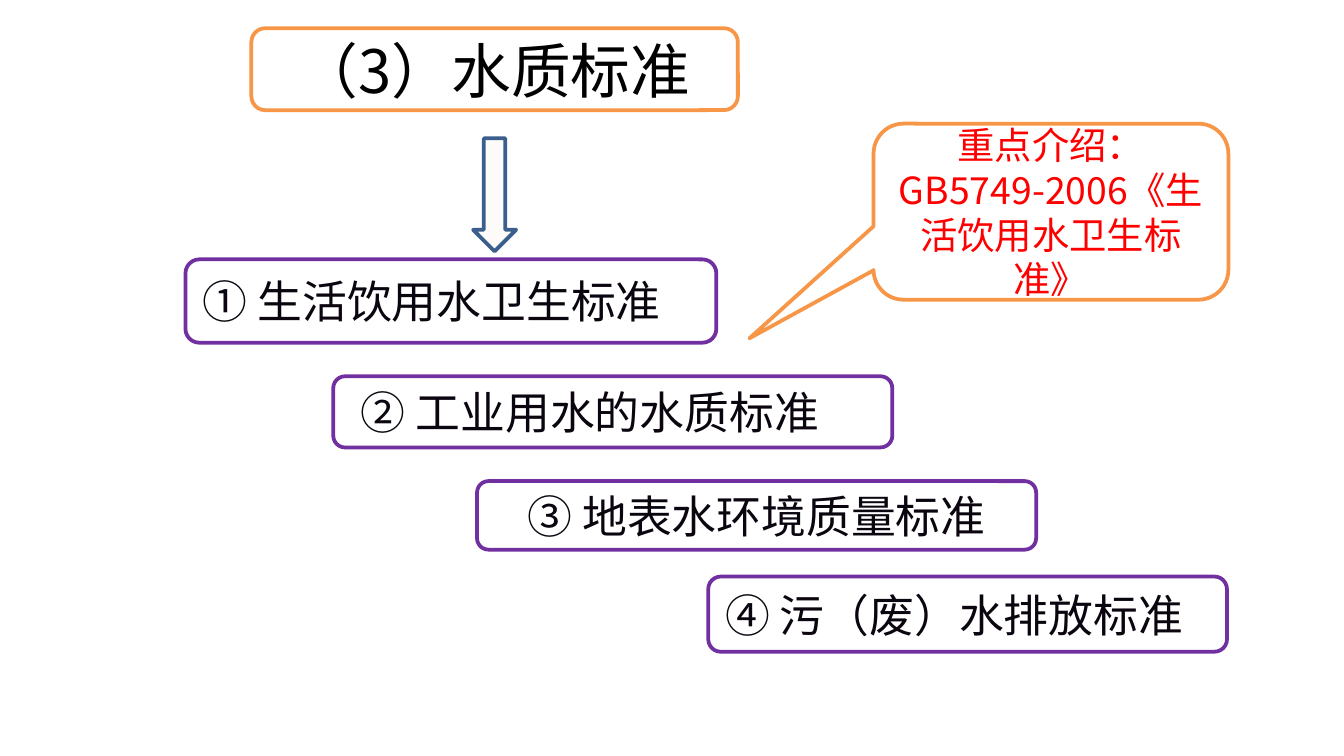
from pptx import Presentation
from pptx.dml.color import RGBColor
from pptx.enum import shapes, text
from pptx.oxml.ns import qn
from pptx.util import Inches, Pt
from lxml import etree

FONT = "Noto Sans CJK SC"
COLORS = {"purple": "7030A0", "orange": "F79646", "blue": "3A5F8C", "ink": "0B050F",
          "black": "000000", "red": "FF0000", "white": "FFFFFF", "ivory": "FCFBF9"}
LEFT, CENTER = text.PP_ALIGN.LEFT, text.PP_ALIGN.CENTER
KIND = shapes.MSO_SHAPE

# Content: wording, box (left, top, width, height), alignment, left inset
standards = [
    ("① 生活饮用水卫生标准", (1.38, 1.93, 3.95, 0.62), LEFT, 0.1),
    ("② 工业用水的水质标准", (2.48, 2.8, 4.16, 0.53), LEFT, 0.18),
    ("③ 地表水环境质量标准", (3.55, 3.58, 4.16, 0.51), CENTER, 0.1),
    ("④ 污（废）水排放标准", (5.27, 4.29, 3.86, 0.56), LEFT, 0.1),
]
# Callouts: wording, box, pointer adjustments, size, colour
callouts = [
    ("重点介绍：GB5749-2006《生活饮用水卫生标准》", (6.5, 0.92, 2.64, 1.31),
     (-0.85, 0.72, 0.17), 20, "red"),
    ("（3）水质标准", (1.87, 0.21, 3.62, 0.61), (0.17, 0.5, 0.17), 32, "black"),
]
arrow_box = (3.52, 1.03, 0.32, 0.84)

# Widescreen slide, 16:9
prs = Presentation()
prs.slide_width = Inches(10)
prs.slide_height = Inches(10) * 9 // 16
slide = prs.slides.add_slide(prs.slide_layouts[6])


def rgb(name):
    return RGBColor.from_string(COLORS[name])


def add_outline(kind, box, line, fill=None):
    shape = slide.shapes.add_shape(kind, *map(Inches, box))
    shape.shadow.inherit = False
    shape.line.color.rgb = rgb(line)
    shape.line.width = Pt(2)
    if fill:
        shape.fill.solid()
        shape.fill.fore_color.rgb = rgb(fill)
    else:
        shape.fill.background()
    return shape


def write(shape, wording, size, color, align=CENTER, inset=0.1):
    frame = shape.text_frame
    frame_format = {"word_wrap": True, "vertical_anchor": text.MSO_ANCHOR.MIDDLE,
                    "margin_left": Inches(inset), "margin_right": Inches(0.1),
                    "margin_top": Inches(0.05), "margin_bottom": Inches(0.05)}
    for name, value in frame_format.items():
        setattr(frame, name, value)
    paragraph = frame.paragraphs[0]
    paragraph.alignment = align
    run = paragraph.add_run()
    run.text = wording
    run.font.name, run.font.size = FONT, Pt(size)
    run.font.color.rgb = rgb(color)
    # East Asian typeface
    etree.SubElement(run.font._element, qn("a:ea")).set("typeface", FONT)


def add_standard(wording, box, align, inset):
    step = add_outline(KIND.ROUNDED_RECTANGLE, box, "purple")
    write(step, wording, 24, "ink", align, inset)


def add_callout(wording, box, pointer, size, color):
    callout = add_outline(KIND.ROUNDED_RECTANGULAR_CALLOUT, box, "orange", "white")
    for index, value in enumerate(pointer):
        callout.adjustments[index] = value
    write(callout, wording, size, color)


# From back to front: first step, arrow, second step, note, last steps, title
note, title = callouts
add_standard(*standards[0])
add_outline(KIND.DOWN_ARROW, arrow_box, "blue", "ivory")
add_standard(*standards[1])
add_callout(*note)
for standard in standards[2:]:
    add_standard(*standard)
add_callout(*title)

prs.save("out.pptx")
